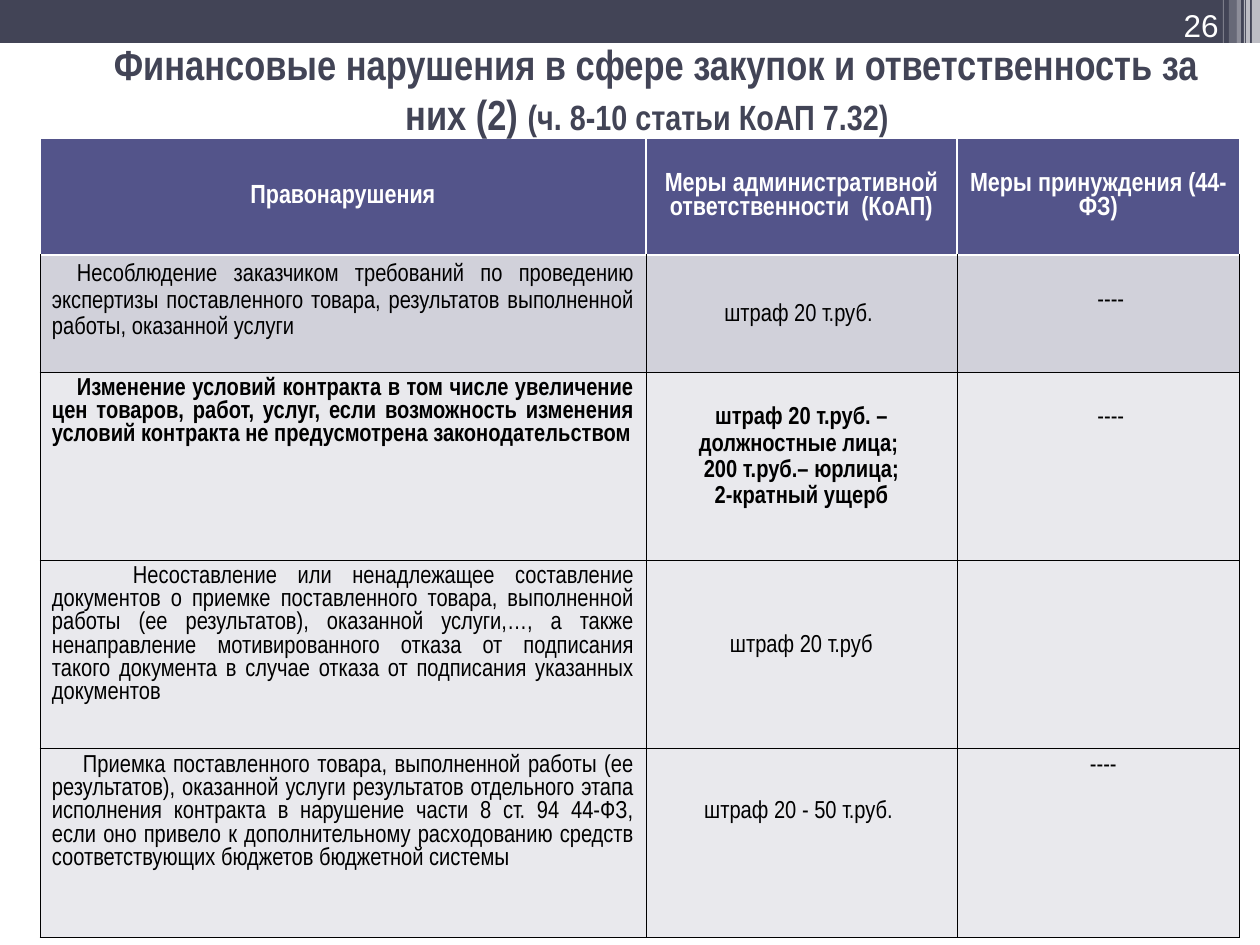
import pptx
import pptx.util
import pptx.dml.color
import pptx.enum.shapes
import pptx.enum.text
import pptx.oxml
import pptx.oxml.ns
from lxml import etree

PX = 914400 // 126
COLORS = {
    "bar": "424456", "header": "53548A", "band": "D1D1DA", "row": "E9E9ED",
    "white": "FFFFFF", "black": "000000",
}
ALIGN = pptx.enum.text.PP_ALIGN
ANCHOR = pptx.enum.text.MSO_ANCHOR
NARROW = "Arial Narrow"
PAD = (12, 6, 12, 6)


def px(n):
    return pptx.util.Emu(n * PX)


def rgb(name):
    return pptx.dml.color.RGBColor.from_string(COLORS[name])


def add_bar(slide, x, y, w, h, color, alpha=100):
    s = slide.shapes.add_shape(pptx.enum.shapes.MSO_SHAPE.RECTANGLE, px(x), px(y), px(w), px(h))
    s.shadow.inherit = False
    s.fill.solid()
    s.fill.fore_color.rgb = rgb(color)
    s.line.fill.background()
    if alpha < 100:
        clr = s._element.spPr.find(".//" + pptx.oxml.ns.qn("a:srgbClr"))
        etree.SubElement(clr, pptx.oxml.ns.qn("a:alpha")).set("val", str(alpha * 1000))


def add_run(p, text, size, color, bold=False, font=NARROW):
    r = p.add_run()
    r.text = text
    r.font.size = pptx.util.Pt(size)
    r.font.name = font
    r.font.bold = bold
    r.font.color.rgb = rgb(color)


def add_text(slide, x, y, w, h, align, anchor, runs, spacing=None):
    tf = slide.shapes.add_textbox(px(x), px(y), px(w), px(h)).text_frame
    tf.word_wrap = True
    tf.vertical_anchor = anchor
    p = tf.paragraphs[0]
    p.alignment = align
    if spacing:
        p.line_spacing = pptx.util.Pt(spacing)
    for run in runs:
        add_run(p, *run)


def set_borders(cell, sides, color, width):
    tcPr = cell._tc.get_or_add_tcPr()
    for i, side in enumerate(sides):
        tcPr.insert(i, pptx.oxml.parse_xml(
            f'<a:ln{side} {pptx.oxml.ns.nsdecls("a")} w="{int(width * 12700)}">'
            f'<a:solidFill><a:srgbClr val="{COLORS[color]}"/></a:solidFill></a:ln{side}>'))


def fill_cell(cell, lines, fill, align=ALIGN.CENTER, anchor=ANCHOR.TOP, pad=PAD,
              size=14, color="black", bold=False, spacing=None, indent=0):
    cell.fill.solid()
    cell.fill.fore_color.rgb = rgb(fill)
    cell.margin_left, cell.margin_top, cell.margin_right, cell.margin_bottom = map(px, pad)
    cell.vertical_anchor = anchor
    for i, line in enumerate(lines):
        tf = cell.text_frame
        p = tf.paragraphs[0] if i == 0 else tf.add_paragraph()
        p.alignment = align
        if spacing:
            p.line_spacing = pptx.util.Pt(spacing)
        if indent:
            p._p.get_or_add_pPr().set("indent", str(px(indent)))
        add_run(p, line, size, color, bold)


def top_pad(y, left=12):
    return (left, y, 12, 6)


def add_violations_table(slide):
    cols, rows = (606, 311, 283), (117, 117, 188, 189, 189)
    frame = slide.shapes.add_table(len(rows), len(cols), px(40), px(138), px(sum(cols)), px(sum(rows)))
    table = frame.table
    for column, w in zip(table.columns, cols):
        column.width = px(w)
    for row, h in zip(table.rows, rows):
        row.height = px(h)

    # Header row
    headers = ("Правонарушения", "Меры административной ответственности  (КоАП)",
               "Меры принуждения (44-ФЗ)")
    for c, text in enumerate(headers):
        cell = table.cell(0, c)
        fill_cell(cell, [text], "header", anchor=ANCHOR.MIDDLE, pad=(0, 0, 0, 0),
                  size=15, color="white", bold=True)
        set_borders(cell, "LRT", "white", 1)

    # Body rows: (lines, formatting) for violation, penalty, enforcement
    justified = {"align": ALIGN.JUSTIFY}
    dash = (["----"], {"pad": top_pad(32), "spacing": 15, "indent": 25})
    body = [
        [(["Несоблюдение заказчиком требований по проведению экспертизы поставленного товара, "
           "результатов выполненной работы, оказанной услуги"],
          {**justified, "spacing": 15, "indent": 25}),
         (["штраф 20 т.руб. "], {"anchor": ANCHOR.MIDDLE, "spacing": 15}),
         dash],
        [(["Изменение условий контракта в том числе увеличение цен товаров, работ, услуг, если "
           "возможность изменения условий контракта не предусмотрена законодательством"],
          {**justified, "bold": True, "indent": 25}),
         (["штраф 20 т.руб. – должностные лица; ", "200 т.руб.– юрлица;", "2-кратный ущерб"],
          {"bold": True, "pad": top_pad(32), "spacing": 15}),
         dash],
        [(["Несоставление или ненадлежащее составление документов о приемке поставленного товара, "
           "выполненной работы (ее результатов), оказанной услуги,…, а также ненаправление "
           "мотивированного отказа от подписания такого документа в случае отказа от подписания "
           "указанных документов"], {**justified, "indent": 81}),
         (["штраф 20 т.руб"], {"pad": top_pad(75)}),
         ([], {})],
        [(["Приемка поставленного товара, выполненной работы (ее результатов), оказанной услуги "
           "результатов отдельного этапа исполнения контракта в нарушение части 8 ст. 94 44-ФЗ, "
           "если оно привело к дополнительному расходованию средств соответствующих бюджетов "
           "бюджетной системы"], {**justified, "indent": 31}),
         (["штраф 20 - 50 т.руб. "], {"pad": top_pad(52)}),
         (["----"], {"pad": top_pad(6, left=22)})],
    ]
    for r, entries in enumerate(body, start=1):
        for c, (lines, style) in enumerate(entries):
            cell = table.cell(r, c)
            fill_cell(cell, lines, "band" if r == 1 else "row", **style)
            set_borders(cell, "LRTB", "black", 0.5)


def main():
    prs = pptx.Presentation()
    prs.slide_width, prs.slide_height = px(1260), px(945)
    slide = prs.slides.add_slide(prs.slide_layouts[6])

    # Top bar with translucent stripes: x, width, height, opacity
    add_bar(slide, 0, 0, 1260, 43, "bar")
    for x, w, h, alpha in ((1252, 8, 86, 65), (1246, 4, 86, 65), (1244, 1, 86, 60),
                           (1237, 4, 86, 40), (1229, 8, 81, 20), (1223, 1, 81, 30)):
        add_bar(slide, x, 0, w, h, "white", alpha)

    add_violations_table(slide)

    # Title and slide number
    add_text(slide, 89, 54, 1124, 69, ALIGN.CENTER, ANCHOR.MIDDLE, [
        (" Финансовые нарушения в сфере закупок и ответственность за них (2) ", 24, "bar", True),
        ("(ч. 8-10 статьи КоАП 7.32) ", 20, "bar", True)])
    add_text(slide, 1012, 0, 219, 43, ALIGN.RIGHT, ANCHOR.TOP,
             [("26", 18, "white", False, "Arial")])

    prs.save("out.pptx")


if __name__ == "__main__":
    main()
